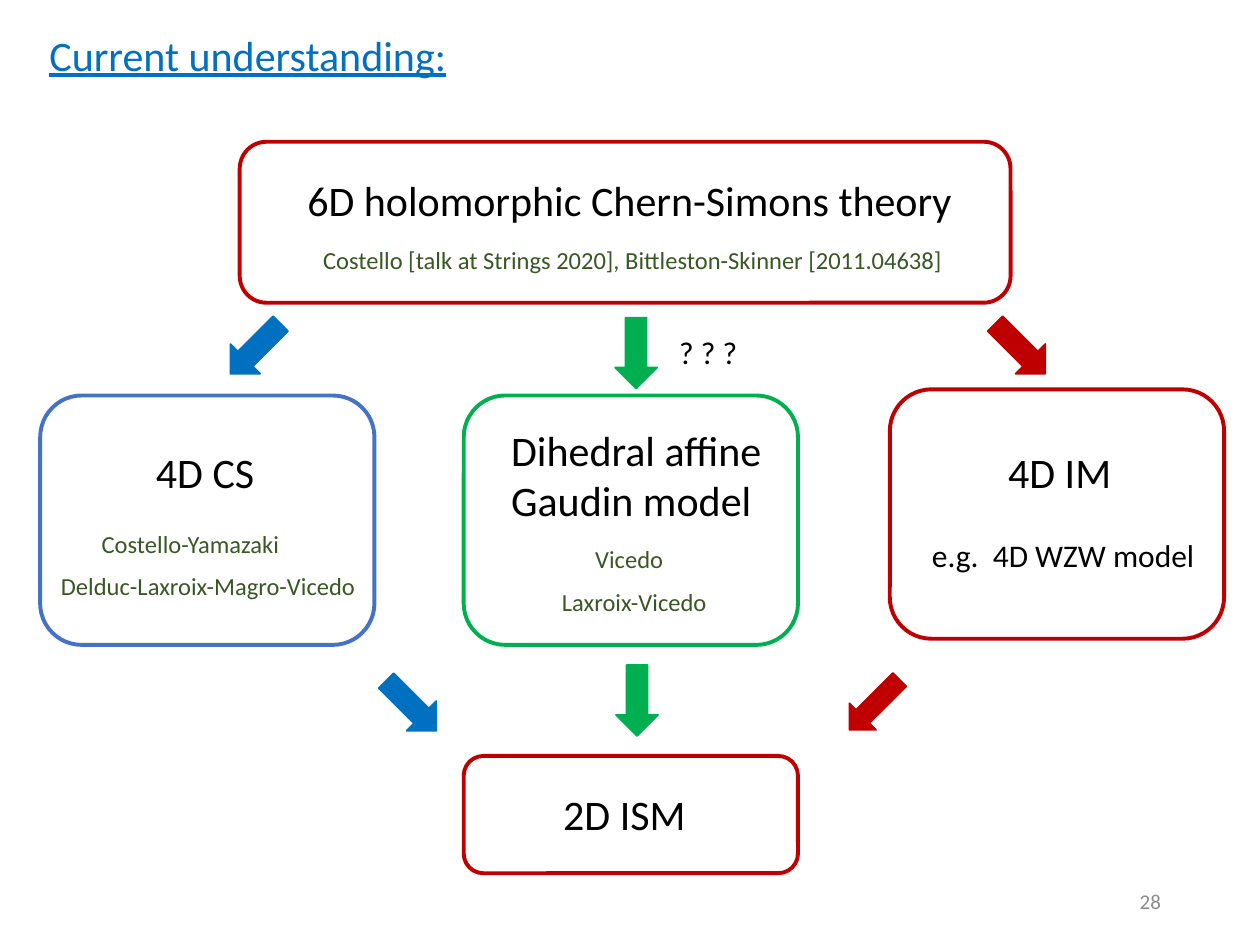
from pptx import Presentation
from pptx.dml.color import RGBColor
from pptx.enum.shapes import MSO_SHAPE as Shape
from pptx.enum.text import MSO_ANCHOR as Anchor, MSO_AUTO_SIZE as AutoSize, PP_ALIGN as Align
from pptx.util import Pt

COLORS = {
    "title": "0070C0", "text": "000000", "citation": "385723", "number": "8C8C8C",
    "outline": "4472C4", "blue": "0070C0", "green": "00B050", "red": "C00000",
}
BOX_WIDTH, BOX_HEIGHT = 191, 142.5
ARROW_WIDTH, ARROW_HEIGHT = 24, 40.5


def write_text(shape, text, size=24, color="text", underline=None,
               align=Align.LEFT, anchor=Anchor.TOP, wrap=False):
    """Fill a shape with text, one paragraph per line."""
    frame = shape.text_frame
    frame.word_wrap = wrap
    frame.auto_size = AutoSize.NONE if wrap else AutoSize.SHAPE_TO_FIT_TEXT
    frame.vertical_anchor = anchor
    frame.text = text
    for paragraph in frame.paragraphs:
        paragraph.alignment = align
        font = paragraph.runs[0].font
        font.name = "Calibri"
        font.size = Pt(size)
        font.underline = underline
        font.color.rgb = RGBColor.from_string(COLORS[color])


class Diagram:
    def __init__(self, slide):
        self.slide = slide

    def title(self, text, left, top, width, height):
        shape = self.slide.shapes.title
        shape.left, shape.top, shape.width, shape.height = map(Pt, (left, top, width, height))
        write_text(shape, text, color="title", underline=True)

    def label(self, text, left, top, width, height=36, **style):
        box = self.slide.shapes.add_textbox(*map(Pt, (left, top, width, height)))
        write_text(box, text, **style)

    def citation(self, text, left, top, width):
        self.label(text, left, top, width, 24.5, size=14, color="citation")

    def shape(self, kind, color, line_width, *bounds):
        shape = self.slide.shapes.add_shape(kind, *map(Pt, bounds))
        shape.shadow.inherit = False
        shape.line.color.rgb = RGBColor.from_string(COLORS[color])
        shape.line.width = Pt(line_width)
        return shape

    def box(self, color, left, top, width=BOX_WIDTH, height=BOX_HEIGHT):
        self.shape(Shape.ROUNDED_RECTANGLE, color, 2.25, left, top, width, height).fill.background()

    def arrow(self, color, left, top, rotation=0, width=ARROW_WIDTH):
        arrow = self.shape(Shape.DOWN_ARROW, color, 1, left, top, width, ARROW_HEIGHT)
        arrow.fill.solid()
        arrow.fill.fore_color.rgb = RGBColor.from_string(COLORS[color])
        arrow.rotation = rotation


def main():
    presentation = Presentation()
    presentation.slide_width, presentation.slide_height = Pt(720), Pt(540)
    diagram = Diagram(presentation.slides.add_slide(presentation.slide_layouts[5]))

    # Title and page number
    diagram.title("Current understanding:", 21, 13, 243.5, 36)
    diagram.label("28", 508.5, 500.5, 162, 28.75, size=12, color="number",
                  align=Align.RIGHT, anchor=Anchor.MIDDLE, wrap=True)

    # Top: six-dimensional theory
    diagram.box("red", 137, 81, 440.5, 92)
    diagram.label("6D holomorphic Chern-Simons theory", 168.5, 96, 391.5)
    diagram.citation("Costello [talk at Strings 2020], Bittleston-Skinner [2011.04638]",
                     177.5, 136.5, 372.5)

    # Left: 4D CS
    diagram.box("outline", 23, 226)
    diagram.label("4D CS", 82, 251.5, 76)
    diagram.citation("Costello-Yamazaki", 51, 299, 117.5)
    diagram.citation("Delduc-Laxroix-Magro-Vicedo", 27.75, 323, 185)

    # Middle: Gaudin model
    diagram.box("green", 265, 226)
    diagram.label("Dihedral affine\nGaudin model", 285, 239, 165, 65.5)
    diagram.citation("Vicedo", 333, 307.5, 54)
    diagram.citation("Laxroix-Vicedo", 314, 332, 98.5)

    # Right: 4D IM
    diagram.box("red", 508.5, 222.5)
    diagram.label("4D IM", 569, 251.5, 79)
    diagram.label("e.g.  4D WZW model", 525.5, 302.5, 166.5, 29, size=18)

    # Bottom: 2D ISM
    diagram.box("red", 265, 432, height=67)
    diagram.label("2D ISM", 314.75, 447, 90.5)

    # Arrows from the top row, then into the bottom box
    diagram.arrow("blue", 134, 179, 45)
    diagram.arrow("green", 351.5, 181.5)
    diagram.label("? ? ?", 381, 186.5, 48, 29, size=18)
    diagram.arrow("red", 571, 179, 315)
    diagram.arrow("blue", 223, 383, 315)
    diagram.arrow("green", 352, 380)
    diagram.arrow("red", 489, 382.5, 45, width=21.5)

    presentation.save("out.pptx")


if __name__ == "__main__":
    main()
